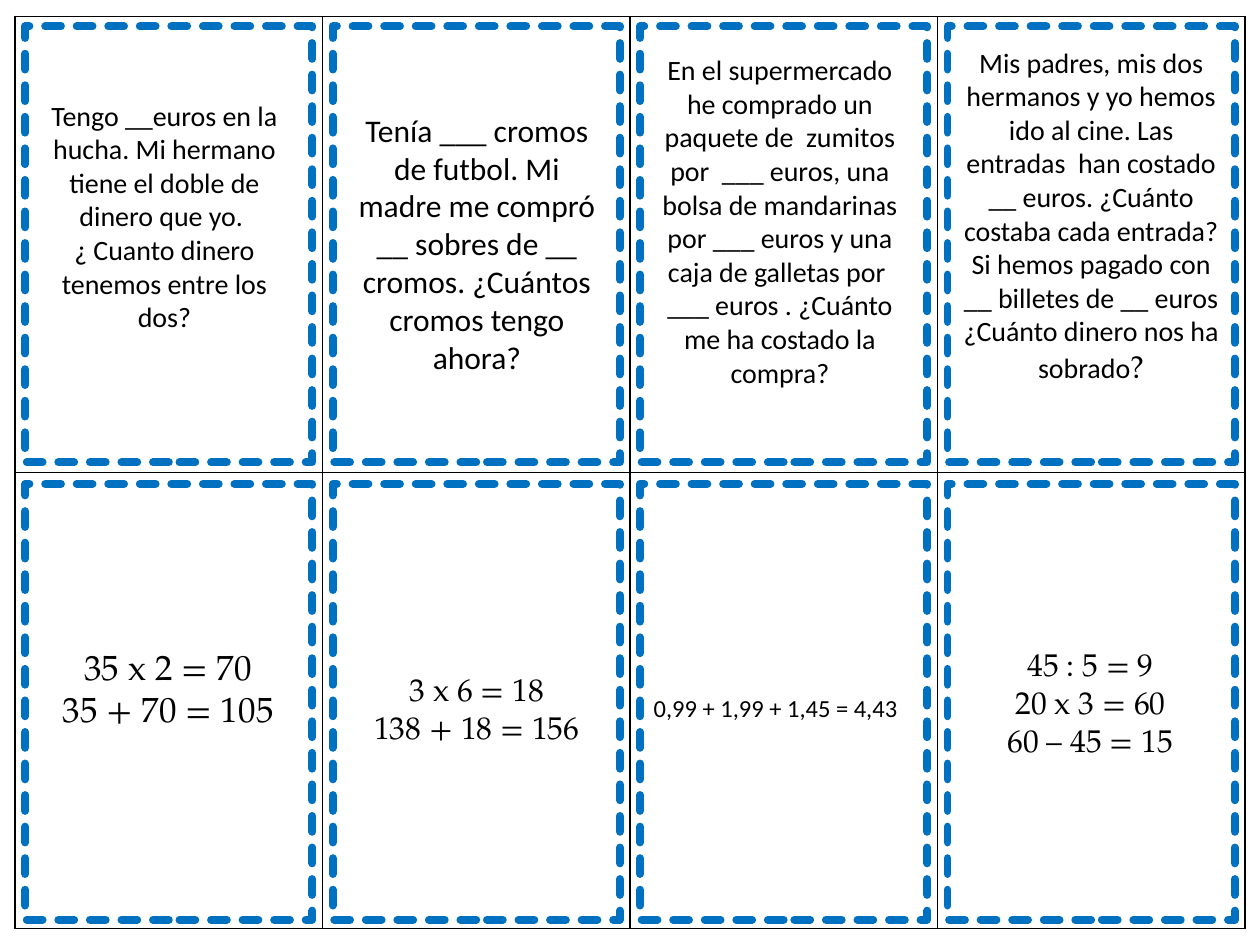
from dataclasses import dataclass

from lxml.etree import SubElement
from pptx import Presentation
from pptx.dml.color import RGBColor
from pptx.enum.dml import MSO_LINE
from pptx.enum.shapes import MSO_SHAPE as Shape
from pptx.enum.text import MSO_AUTO_SIZE as Fit, PP_ALIGN as Align
from pptx.oxml import parse_xml
from pptx.oxml.ns import nsdecls, qn
from pptx.util import Inches, Pt

BLUE = RGBColor(0x00, 0x70, 0xC0)
BLACK = RGBColor(0, 0, 0)
WHITE = RGBColor(255, 255, 255)
SANS, SERIF = "Calibri", "TeX Gyre Pagella"

# Grid of cards, in inches
COLS, ROWS = 4, 2
LEFT, TOP = 0.12, 0.13
CELL_W, CELL_H = 2.44, 3.62
PAD = 0.08
CARD_W, CARD_H = CELL_W - 2 * PAD, 3.46


@dataclass(frozen=True)
class Note:
    col: int
    row: int
    dx: float  # offset from the cell's left edge
    dy: float  # offset from the cell's top edge
    width: float
    height: float
    text: str
    size: int
    font: str = SANS
    align: Align = Align.CENTER
    tail: str = ""  # closing mark in the larger serif


NOTES = [
    # Problems
    Note(0, 0, 0.16, 0.6, 2.05, 1.99,
         "Tengo __euros en la hucha. Mi hermano tiene el doble de dinero que yo. \n"
         "¿ Cuanto dinero tenemos entre los dos?", 16),
    Note(1, 0, 0.16, 0.7, 2.13, 2.22,
         "Tenía ___ cromos de futbol. Mi madre me compró __ sobres de __ cromos. "
         "¿Cuántos cromos tengo ahora?", 18),
    Note(2, 0, 0.09, 0.24, 2.2, 2.79,
         "En el supermercado he comprado un paquete de  zumitos por  ___ euros, "
         "una bolsa de mandarinas por ___ euros y una caja de galletas por  ___ "
         "euros . ¿Cuánto me ha costado la compra?", 16),
    Note(3, 0, 0.08, 0.18, 2.28, 2.83,
         "Mis padres, mis dos hermanos y yo hemos ido al cine. Las entradas  han "
         "costado __ euros. ¿Cuánto costaba cada entrada? Si hemos pagado con __ "
         "billetes de __ euros ¿Cuánto dinero nos ha sobrado", 16, tail="?"),
    # Answers
    Note(0, 1, 0.23, 1.32, 1.97, 0.77, "35 x 2 = 70\n35 + 70 = 105", 20, SERIF),
    Note(1, 1, 0.16, 1.52, 2.13, 0.71, "3 x 6 = 18\n138 + 18 = 156", 18, SERIF),
    Note(2, 1, 0.09, 1.7, 2.27, 0.34, "0,99 + 1,99 + 1,45 = 4,43", 14,
         align=Align.LEFT),
    Note(3, 1, 0.43, 1.32, 1.57, 1.01,
         "45 : 5 = 9\n20 x 3 = 60\n60 – 45 = 15", 18, SERIF),
]


def place(col: int, row: int, dx: float, dy: float) -> tuple:
    return Inches(LEFT + col * CELL_W + dx), Inches(TOP + row * CELL_H + dy)


def edge(cell) -> None:
    props = cell._tc.get_or_add_tcPr()
    for i, side in enumerate("LRTB"):
        line = parse_xml(f'<a:ln{side} {nsdecls("a")} w="12700"/>')
        fill = SubElement(line, qn("a:solidFill"))
        SubElement(fill, qn("a:srgbClr")).set("val", str(BLACK))
        props.insert(i, line)


def draw_grid(slide) -> None:
    frame = slide.shapes.add_table(ROWS, COLS, *place(0, 0, 0, 0),
                                   Inches(COLS * CELL_W), Inches(ROWS * CELL_H))
    table = frame.table
    table.first_row = table.horz_banding = False
    for cell in table.iter_cells():
        cell.fill.solid()
        cell.fill.fore_color.rgb = WHITE
        edge(cell)


def draw_card(slide, col: int, row: int) -> None:
    card = slide.shapes.add_shape(Shape.RECTANGLE, *place(col, row, PAD, PAD + row * 0.01),
                                  Inches(CARD_W), Inches(CARD_H))
    card.shadow.inherit = False
    card.fill.solid()
    card.fill.fore_color.rgb = WHITE
    card.line.color.rgb = BLUE
    card.line.width = Pt(4.5)
    card.line.dash_style = MSO_LINE.SQUARE_DOT
    line = card.line._get_or_add_ln()
    line.set("cap", "rnd")
    line.find(qn("a:prstDash")).set("val", "sysDash")


def style(run, size: int, font: str) -> None:
    run.font.size = Pt(size)
    run.font.name = font
    run.font.color.rgb = BLACK


def draw_note(slide, note: Note) -> None:
    box = slide.shapes.add_textbox(*place(note.col, note.row, note.dx, note.dy),
                                   Inches(note.width), Inches(note.height))
    frame = box.text_frame
    frame.text = note.text
    frame.word_wrap = True
    frame.auto_size = Fit.SHAPE_TO_FIT_TEXT
    for para in frame.paragraphs:
        para.alignment = note.align
        for run in para.runs:
            style(run, note.size, note.font)
    if note.tail:
        mark = frame.paragraphs[-1].add_run()
        mark.text = note.tail
        style(mark, 18, SERIF)


def main() -> None:
    deck = Presentation()
    deck.slide_width, deck.slide_height = Inches(10), Inches(7.5)
    slide = deck.slides.add_slide(deck.slide_layouts[6])
    draw_grid(slide)
    for row in range(ROWS):
        for col in range(COLS):
            draw_card(slide, col, row)
    for note in NOTES:
        draw_note(slide, note)
    deck.save("out.pptx")


if __name__ == "__main__":
    main()
